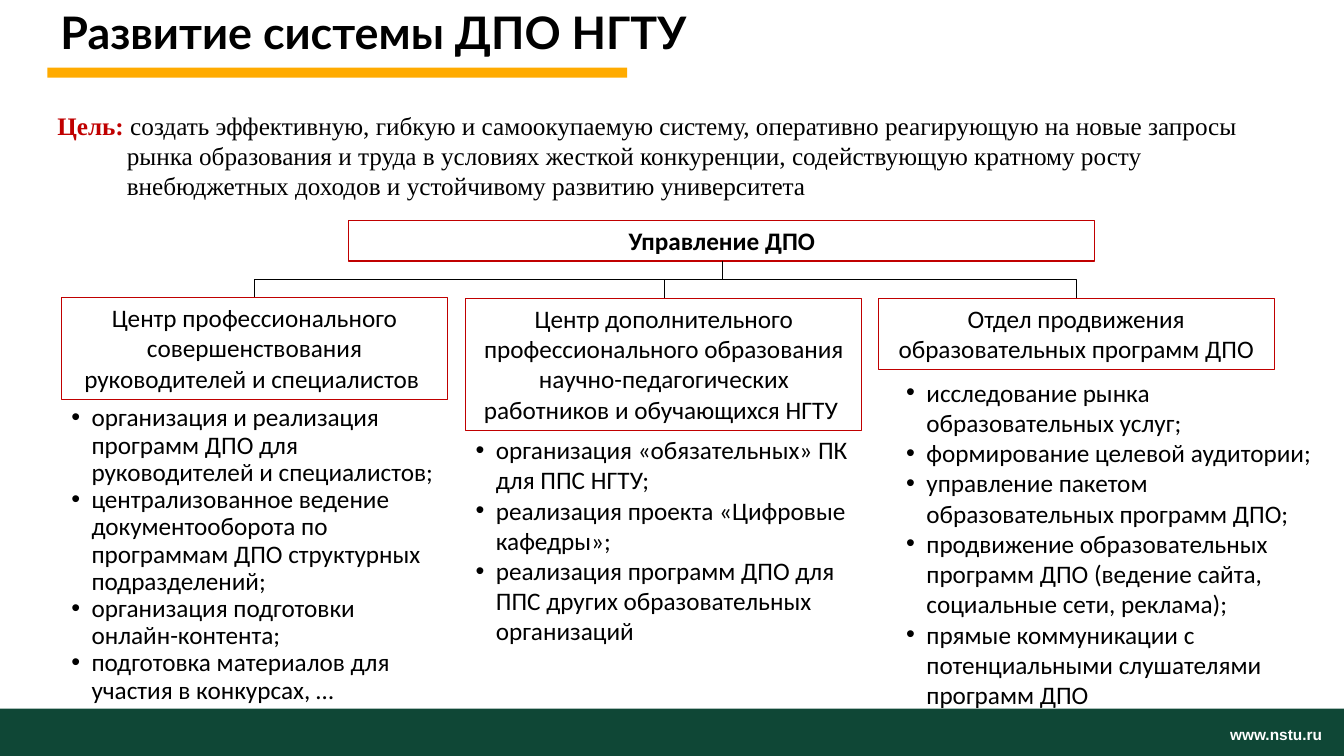
from lxml.etree import SubElement
from pptx import Presentation
from pptx.dml.color import RGBColor
from pptx.enum.shapes import MSO_CONNECTOR, MSO_SHAPE
from pptx.enum.text import MSO_ANCHOR, MSO_AUTO_SIZE, PP_ALIGN
from pptx.oxml.ns import qn
from pptx.util import Inches, Pt

COLORS = {"green": "0F4736", "amber": "FFAB00", "red": "C00000", "black": "000000", "white": "FFFFFF"}
BODY = {"name": "Calibri", "size": Pt(18), "bold": False, "color": "black"}
GOAL = BODY | {"name": "Times New Roman"}

presentation = Presentation()
presentation.slide_width = Inches(13.33)
presentation.slide_height = Inches(7.5)
slide = presentation.slides.add_slide(presentation.slide_layouts[6])


def add_box(place, fill=None, line=None):
    shape = slide.shapes.add_shape(MSO_SHAPE.RECTANGLE, *map(Inches, place))
    shape.shadow.inherit = False
    if fill:
        shape.fill.solid()
        shape.fill.fore_color.rgb = RGBColor.from_string(COLORS[fill])
    else:
        shape.fill.background()
    if line:
        shape.line.color.rgb = RGBColor.from_string(COLORS[line])
        shape.line.width = Pt(0.75)
    else:
        shape.line.fill.background()
    return shape


def write(shape, paragraphs, frame_format, align=PP_ALIGN.LEFT, indent=0, bullet=None, spacing=None):
    frame = shape.text_frame
    for name, value in ({"word_wrap": True, "vertical_anchor": MSO_ANCHOR.TOP} | frame_format).items():
        setattr(frame, name, value)
    for index, runs in enumerate(paragraphs):
        paragraph = frame.add_paragraph() if index else frame.paragraphs[0]
        properties = paragraph._p.get_or_add_pPr()
        if indent:
            properties.set("marL", str(Inches(indent)))
            properties.set("indent", str(Inches(-indent)))
        if bullet:
            SubElement(properties, qn("a:buFont"), typeface="Arial")
            SubElement(properties, qn("a:buChar"), char=bullet)
        paragraph.alignment = align
        if spacing:
            paragraph.line_spacing = spacing
        for text, font_format in runs:
            run = paragraph.add_run()
            run.text = text
            for name, value in font_format.items():
                if name == "color":
                    run.font.color.rgb = RGBColor.from_string(COLORS[value])
                else:
                    setattr(run.font, name, value)


grow = {"auto_size": MSO_AUTO_SIZE.SHAPE_TO_FIT_TEXT}
margins = ("margin_left", "margin_top", "margin_right", "margin_bottom")

add_box((0, 7.03, 13.33, 0.47), fill="green")
address = slide.shapes.add_textbox(Inches(12.2), Inches(7.19), Inches(0.94), Inches(0.16))
write(address, [[("www.nstu.ru", {"name": "Arial", "size": Pt(11), "bold": True, "color": "white"})]],
      dict.fromkeys(margins, 0) | {"word_wrap": False})

title = slide.shapes.add_textbox(Inches(0.47), 0, Inches(10.98), Inches(0.62))
title_margins = dict(zip(margins, map(Inches, (0.13, 0.07, 0.13, 0.07))))
write(title, [[("Развитие системы ДПО НГТУ", {"name": "Lato", "size": Pt(32), "bold": True, "color": "black"})]],
      title_margins | {"vertical_anchor": MSO_ANCHOR.MIDDLE})
add_box((0.47, 0.67, 5.75, 0.1), fill="amber")

goal = slide.shapes.add_textbox(Inches(0.47), Inches(1.04), Inches(12.44), Inches(1.01))
write(goal, [[
    ("Цель: ", GOAL | {"bold": True, "color": "red"}),
    ("создать эффективную, гибкую и самоокупаемую систему, оперативно реагирующую на новые запросы "
     "рынка образования и труда в условиях жесткой конкуренции, содействующую кратному росту "
     "внебюджетных доходов и устойчивому развитию университета", GOAL),
]], grow, indent=0.69)

management = add_box((3.46, 2.19, 7.4, 0.4), line="red")
write(management, [[("Управление ДПО", BODY | {"bold": True})]], grow, PP_ALIGN.CENTER)

departments = [
    ("Центр профессионального совершенствования руководителей и специалистов ",
     (0.61, 2.95, 3.83, 1.01), (0.61, 3.97, 3.83, 3.1), 0.9,
     ["организация и реализация программ ДПО для руководителей и специалистов;",
      "централизованное ведение документооборота по программам ДПО структурных подразделений;",
      "организация подготовки онлайн-контента;",
      "подготовка материалов для участия в конкурсах, …"]),
    ("Центр дополнительного профессионального образования научно-педагогических "
     "работников и обучающихся НГТУ ",
     (4.62, 2.96, 3.93, 1.31), (4.62, 4.26, 3.93, 2.22), None,
     ["организация «обязательных» ПК для ППС НГТУ;",
      "реализация проекта «Цифровые кафедры»;",
      "реализация программ ДПО для ППС других образовательных организаций"]),
    ("Отдел продвижения образовательных программ ДПО",
     (8.71, 2.96, 3.93, 0.71), (8.89, 3.69, 4.37, 3.43), None,
     ["исследование рынка образовательных услуг;",
      "формирование целевой аудитории;",
      "управление пакетом образовательных программ ДПО;",
      "продвижение образовательных программ ДПО (ведение сайта, социальные сети, реклама);",
      "прямые коммуникации с потенциальными слушателями программ ДПО"]),
]
trunk_x, trunk_y = 7.16, 2.59

for name, place, list_place, spacing, tasks in departments:
    department = add_box(place, line="red")
    write(department, [[(name, BODY)]], grow, PP_ALIGN.CENTER)
    task_list = slide.shapes.add_textbox(*map(Inches, list_place))
    write(task_list, [[(task, BODY)] for task in tasks], grow, indent=0.2, bullet="•", spacing=spacing)

    left, top, width, height = place
    target_x = left + width / 2
    drop, span = top - trunk_y, abs(target_x - trunk_x)
    middle_x, middle_y = (trunk_x + target_x) / 2, (trunk_y + top) / 2
    ends = [middle_x - drop / 2, middle_x + drop / 2]
    rightward = target_x > trunk_x
    if rightward:
        ends.reverse()
    connector = slide.shapes.add_connector(
        MSO_CONNECTOR.ELBOW, Inches(ends[0]), Inches(middle_y - span / 2),
        Inches(ends[1]), Inches(middle_y + span / 2))
    connector.line.color.rgb = RGBColor.from_string(COLORS["black"])
    connector.line.width = Pt(0.5)
    properties = connector._element.spPr
    properties.find(qn("a:xfrm")).set("rot", str((270 if rightward else 90) * 60000))
    SubElement(properties, qn("a:effectLst"))

presentation.save("out.pptx")
